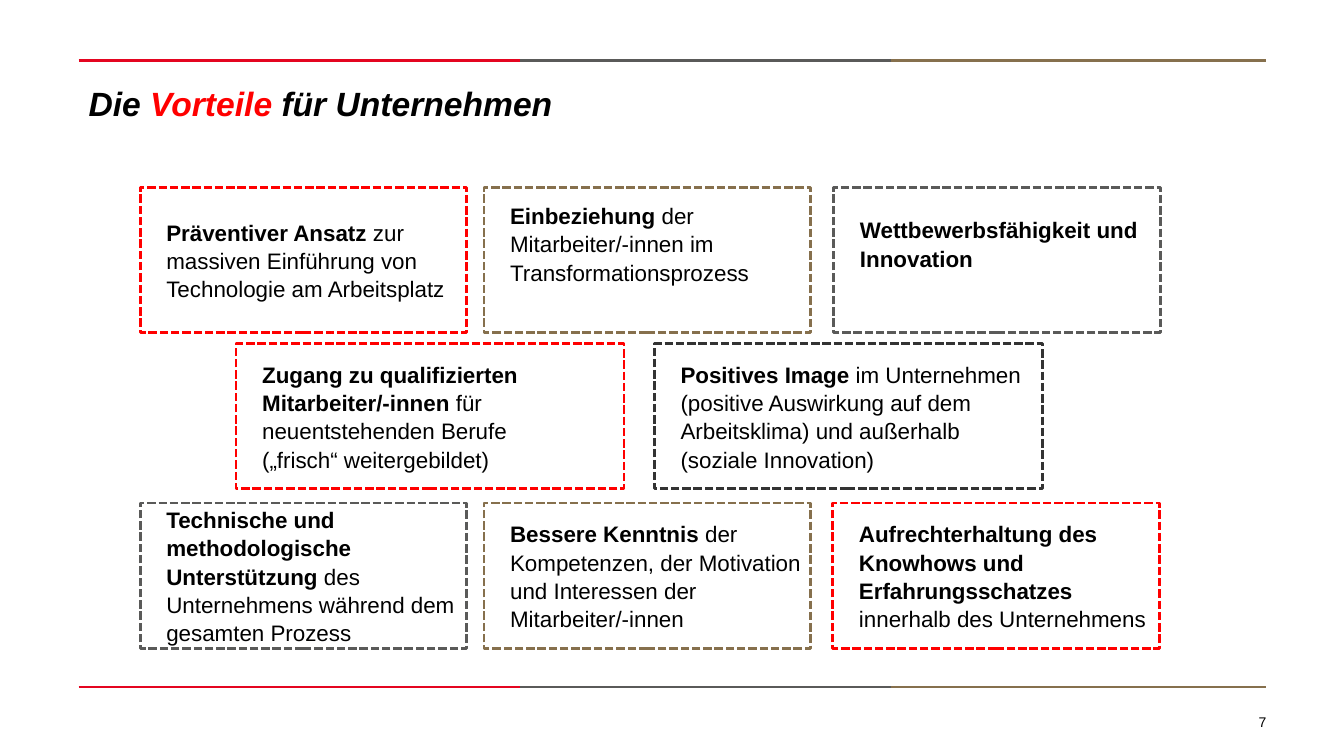
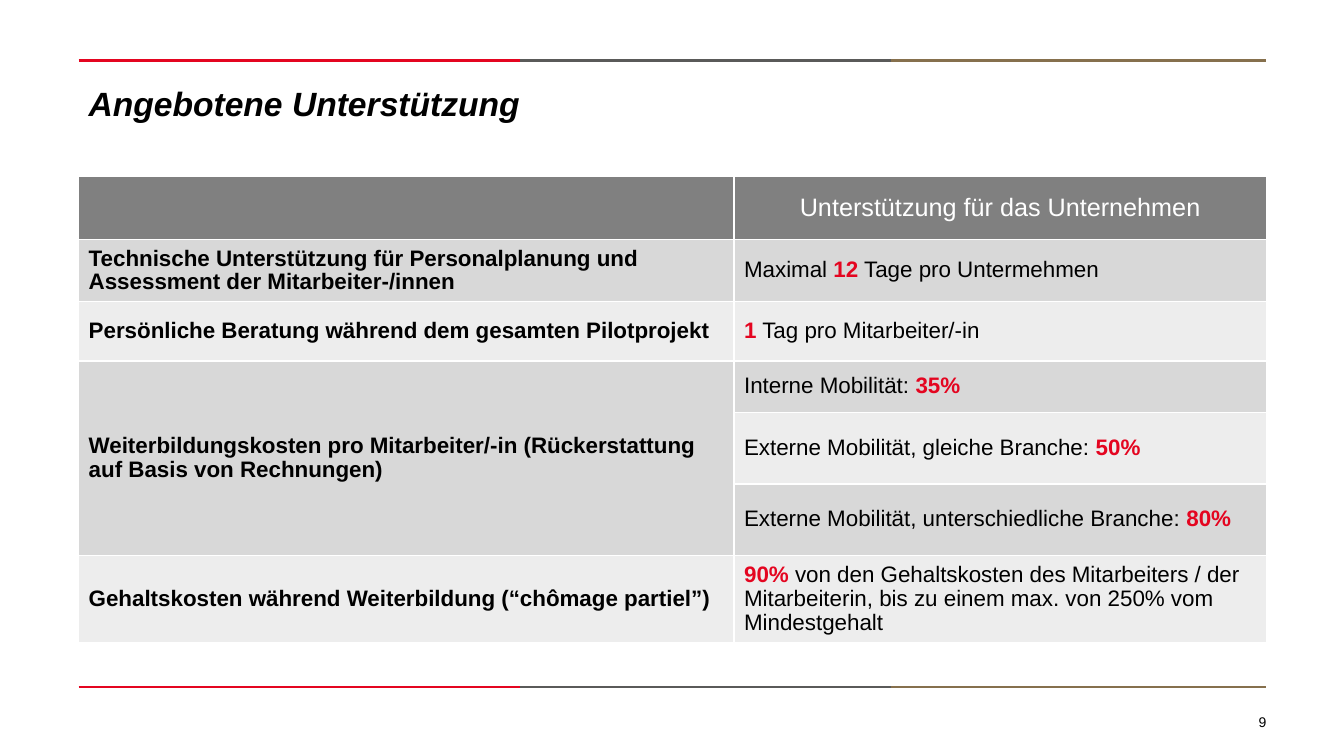
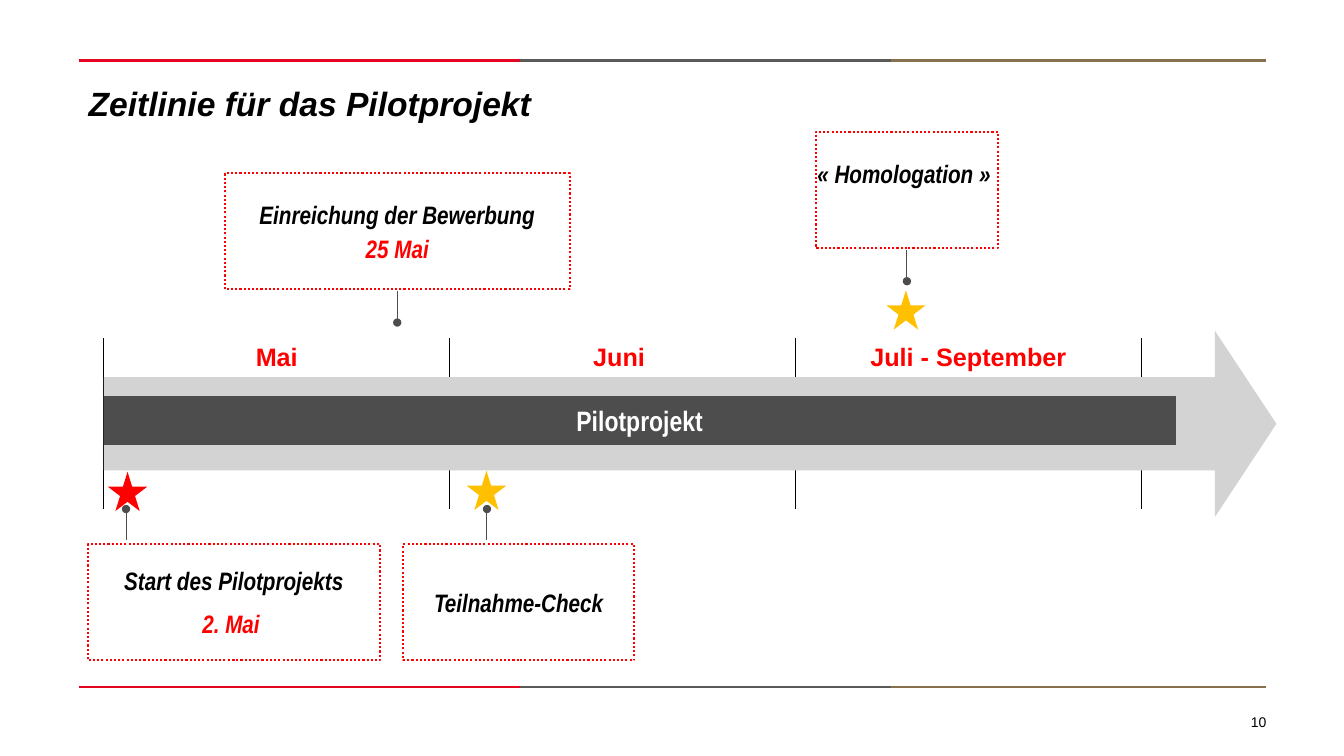
from lxml import etree
from pptx import Presentation
from pptx import util as u
from pptx.dml.color import RGBColor
from pptx.enum import dml, shapes, text
from pptx.oxml import ns

RED = RGBColor(0xE4, 0x05, 0x20)
BRIGHT_RED = RGBColor(0xFF, 0x00, 0x00)
GREY = RGBColor(0x5A, 0x5A, 0x59)
DARK_GREY = RGBColor(0x4D, 0x4D, 0x4D)
CHARCOAL = RGBColor(0x33, 0x33, 0x33)
HEADER_GREY = RGBColor(0x80, 0x80, 0x80)
ARROW_GREY = RGBColor(0xD3, 0xD3, 0xD3)
BAND_DARK = RGBColor(0xD8, 0xD8, 0xD8)
BAND_LIGHT = RGBColor(0xED, 0xED, 0xED)
BROWN = RGBColor(0x86, 0x70, 0x4D)
GOLD = RGBColor(0xFF, 0xC0, 0x00)
BLACK = RGBColor(0, 0, 0)
WHITE = RGBColor(0xFF, 0xFF, 0xFF)

SLIDE_WIDTH, SLIDE_HEIGHT = 13.33, 7.5
LEFT, RIGHT = 0.78, 12.56
CONTENT_WIDTH = RIGHT - LEFT
RULE_TOPS = (0.6, 6.82)
RULE_PARTS = ((LEFT, 5.3, RED), (5.16, 8.87, GREY), (8.84, RIGHT, BROWN))

# Benefit rows: top, box width, left edges
BENEFIT_ROWS = (
    (1.86, 3.24, (1.39, 4.8, 8.27)),
    (3.41, 3.85, (2.34, 6.49)),
    (4.99, 3.24, (1.39, 4.8, 8.26)),
)
BENEFIT_HEIGHT = 1.44
RAISED = 0.33  # one text line, added below to lift the text

AXIS_LEFT, MONTH_WIDTH = 1.03, 3.43
CALLOUT_HEIGHT = 1.15
STAR_SIZE = 0.39

CENTER = text.PP_ALIGN.CENTER


def inches(*lengths):
    return [u.Inches(length) for length in lengths]


def write(frame, paragraphs, *, size, color=BLACK, font="Arial", bold=False,
          italic=False, align=None, spacing=None, after=0):
    """Fill a frame; a paragraph is a list of strings or (string, format) runs."""
    for index, runs in enumerate(paragraphs):
        paragraph = frame.paragraphs[0] if index == 0 else frame.add_paragraph()
        paragraph.alignment = align or text.PP_ALIGN.LEFT
        if spacing:
            paragraph.line_spacing = spacing
        if index < len(paragraphs) - 1:
            paragraph.space_after = u.Pt(after)
        for item in runs:
            words, special = (item, {}) if isinstance(item, str) else item
            for number, line in enumerate(words.split("\n")):
                if number:
                    paragraph.add_line_break()
                run = paragraph.add_run()
                run.text = line
                run.font.size = u.Pt(size)
                run.font.name = font
                run.font.italic = italic
                run.font.bold = special.get("bold", bold)
                run.font.color.rgb = special.get("color", color)


def set_insets(frame, left=0, top=0, right=0, bottom=0):
    frame.margin_left, frame.margin_top = inches(left, top)
    frame.margin_right, frame.margin_bottom = inches(right, bottom)


def add_text(slide, box, paragraphs, insets=None, **text_format):
    frame = slide.shapes.add_textbox(*inches(*box)).text_frame
    frame.word_wrap = True
    if insets is not None:
        set_insets(frame, *insets)
    write(frame, paragraphs, **text_format)


def add_shape(slide, kind, box, fill=None, line=None, width=1.5, dash=None):
    shape = slide.shapes.add_shape(kind, *inches(*box))
    shape.shadow.inherit = False
    if fill is None:
        shape.fill.background()
    else:
        shape.fill.solid()
        shape.fill.fore_color.rgb = fill
    if line is None:
        shape.line.fill.background()
    else:
        shape.line.color.rgb = line
        shape.line.width = u.Pt(width)
        shape.line.dash_style = dash
    shape.text_frame.word_wrap = True
    shape.text_frame.vertical_anchor = text.MSO_ANCHOR.MIDDLE
    return shape


def add_line(slide, start, end, color, width, dot=False):
    """Draw a straight line, with a round dot at its start if asked."""
    line = slide.shapes.add_connector(
        shapes.MSO_CONNECTOR.STRAIGHT, *inches(*start, *end))
    line.line.color.rgb = color
    line.line.width = u.Pt(width)
    properties = line._element.spPr
    if dot:
        etree.SubElement(properties.get_or_add_ln(), ns.qn("a:headEnd"), type="oval")
    etree.SubElement(properties, ns.qn("a:effectLst"))


def set_borders(cell, sides, color):
    """Give the sides, listed in the order L R T B, a line of one point."""
    properties = cell._tc.get_or_add_tcPr()
    for position, side in enumerate(sides):
        border = etree.Element(ns.qn(f"a:ln{side}"), w=str(u.Pt(1)))
        fill = etree.SubElement(border, ns.qn("a:solidFill"))
        etree.SubElement(fill, ns.qn("a:srgbClr"), val=str(color))
        properties.insert(position, border)


def add_table(slide, left, top, widths, heights):
    table = slide.shapes.add_table(
        len(heights), len(widths),
        *inches(left, top, sum(widths), sum(heights))).table
    table.first_row = table.horz_banding = False
    for column, width in zip(table.columns, widths):
        column.width = u.Inches(width)
    for row, height in zip(table.rows, heights):
        row.height = u.Inches(height)
    return table


def new_slide(presentation, title, number):
    slide = presentation.slides.add_slide(presentation.slide_layouts[6])
    for top in RULE_TOPS:
        for start, end, color in RULE_PARTS:
            add_line(slide, (start, top), (end, top), color, 1.5)
    add_text(slide, (LEFT, 0.75, CONTENT_WIDTH, 1), [title],
             size=24, bold=True, italic=True, spacing=1.05)
    add_text(slide, (10.33, 7.08, RIGHT - 10.33, 0.17), [[str(number)]],
             insets=(), size=10, align=text.PP_ALIGN.RIGHT)
    return slide


def add_benefit(slide, box, color, lead, rest="", lift=0):
    shape = add_shape(slide, shapes.MSO_SHAPE.RECTANGLE, box, line=color,
                      width=2, dash=dml.MSO_LINE.SQUARE_DOT)
    set_insets(shape.text_frame, 0.26, 0.04, 0.07, 0.04 + lift)
    runs = [(lead, {"bold": True})] + ([rest] if rest else [])
    write(shape.text_frame, [runs], size=16, spacing=1.05)


def build_benefits(presentation):
    slide = new_slide(presentation, [
        "Die ", ("Vorteile", {"color": BRIGHT_RED}), " für Unternehmen"], 7)
    rows = (
        ((BRIGHT_RED, "Präventiver Ansatz ",
          "zur massiven Einführung von Technologie am Arbeitsplatz"),
         (BROWN, "Einbeziehung ",
          "der Mitarbeiter/-innen im Transformationsprozess", RAISED),
         (GREY, "Wettbewerbsfähigkeit und Innovation", "", RAISED)),
        ((BRIGHT_RED, "Zugang zu qualifizierten Mitarbeiter/-innen ",
          "für neuentstehenden Berufe \n(„frisch“ weitergebildet)"),
         (CHARCOAL, "Positives Image ",
          "im Unternehmen (positive Auswirkung auf dem Arbeitsklima) "
          "und außerhalb (soziale Innovation)")),
        ((GREY, "Technische und methodologische Unterstützung ",
          "des Unternehmens während dem gesamten Prozess"),
         (BROWN, "Bessere Kenntnis ",
          "der Kompetenzen, der Motivation und Interessen der Mitarbeiter/-innen"),
         (BRIGHT_RED, "Aufrechterhaltung des Knowhows und Erfahrungsschatzes ",
          "innerhalb des Unternehmens")),
    )
    for (top, width, lefts), benefits in zip(BENEFIT_ROWS, rows):
        for left, benefit in zip(lefts, benefits):
            add_benefit(slide, (left, top, width, BENEFIT_HEIGHT), *benefit)


def build_support(presentation):
    slide = new_slide(presentation, ["Angebotene Unterstützung"], 9)

    def key(figure):
        return figure, {"color": RED, "bold": True}

    rows = (
        ("", ["Unterstützung für das Unternehmen"]),
        ("Technische Unterstützung für Personalplanung und Assessment "
         "der Mitarbeiter-/innen",
         ["Maximal ", key("12"), " Tage pro Untermehmen"]),
        ("Persönliche Beratung während dem gesamten Pilotprojekt",
         [key("1"), " Tag pro Mitarbeiter/-in"]),
        ("Weiterbildungskosten pro Mitarbeiter/-in "
         "(Rückerstattung auf Basis von Rechnungen)",
         ["Interne Mobilität: ", key("35%")]),
        ("", ["Externe Mobilität, gleiche Branche: ", key("50%")]),
        ("", ["Externe Mobilität, unterschiedliche Branche: ", key("80%")]),
        ("Gehaltskosten während Weiterbildung (“chômage partiel”)",
         [key("90%"), " von den Gehaltskosten des Mitarbeiters / der Mitarbeiterin, "
          "bis zu einem max. von 250% vom Mindestgehalt"]),
    )
    table = add_table(slide, LEFT, 1.75, (6.5, 5.28),
                      (0.63, 0.59, 0.59, 0.51, 0.71, 0.71, 0.83))
    table.cell(3, 0).merge(table.cell(5, 0))
    for row, (topic, support) in enumerate(rows):
        header = row == 0
        band = BAND_DARK if row % 2 else BAND_LIGHT
        for column, runs in enumerate(([topic] if topic else [], support)):
            cell = table.cell(row, column)
            cell.vertical_anchor = text.MSO_ANCHOR.MIDDLE
            cell.fill.solid()
            cell.fill.fore_color.rgb = HEADER_GREY if header else band
            set_borders(cell, "LRTB", WHITE)
            if runs:
                write(cell.text_frame, [runs], size=18 if header else 16,
                      color=WHITE if header else BLACK, bold=column == 0,
                      align=CENTER if header else None,
                      spacing=None if header else 0.96)


def add_callout(slide, left, top, width, paragraphs, *, pin, after=3, lift=0):
    """Draw a dotted box and its pin, given as x, dot y and line end y."""
    shape = add_shape(slide, shapes.MSO_SHAPE.RECTANGLE,
                      (left, top, width, CALLOUT_HEIGHT), line=BRIGHT_RED,
                      dash=dml.MSO_LINE.ROUND_DOT)
    set_insets(shape.text_frame, bottom=lift)
    write(shape.text_frame, paragraphs, size=18, font="Arial Narrow", bold=True,
          italic=True, align=CENTER, after=after)
    x, dot, end = pin
    add_line(slide, (x, dot), (x, end), DARK_GREY, 0.75, dot=True)


def callout_above(slide, left, top, width, paragraphs, **options):
    bottom = top + CALLOUT_HEIGHT
    add_callout(slide, left, top, width, paragraphs,
                pin=(left + width / 2, bottom + 0.33, bottom + 0.02), **options)


def callout_below(slide, left, width, pin_x, paragraphs):
    top = 5.4
    add_callout(slide, left, top, width, paragraphs, after=9,
                pin=(pin_x, top - 0.35, top - 0.04))


def build_timeline(presentation):
    slide = new_slide(presentation, ["Zeitlinie für das Pilotprojekt"], 10)
    months = ("Mai", "Juni ", "Juli - September")
    table = add_table(slide, AXIS_LEFT, 3.36, [MONTH_WIDTH] * len(months), [1.68])
    for column, month in enumerate(months):
        cell = table.cell(0, column)
        cell.fill.background()
        set_borders(cell, "LR", BLACK)
        write(cell.text_frame, [[month]], size=18, color=BRIGHT_RED, bold=True,
              align=CENTER)

    arrow = add_shape(slide, shapes.MSO_SHAPE.RIGHT_ARROW,
                      (AXIS_LEFT, 3.28, 11.63, 1.85), fill=ARROW_GREY)
    arrow.adjustments[0], arrow.adjustments[1] = 0.5, 0.33
    bar = add_shape(slide, shapes.MSO_SHAPE.RECTANGLE,
                    (AXIS_LEFT, 3.93, 10.63, 0.48), fill=DARK_GREY,
                    line=DARK_GREY, width=0.25)
    write(bar.text_frame, [["Pilotprojekt"]], size=20, color=WHITE,
          font="Arial Narrow", bold=True, align=CENTER)

    for left, top, color in ((1.07, 4.68, BRIGHT_RED), (4.63, 4.67, GOLD),
                             (8.79, 2.88, GOLD)):
        add_shape(slide, shapes.MSO_SHAPE.STAR_5_POINT,
                  (left, top, STAR_SIZE, STAR_SIZE), fill=color)

    date = {"color": BRIGHT_RED}
    callout_above(slide, 2.23, 1.72, 3.42,
                  [["Einreichung der Bewerbung"], [("25 Mai", date)]])
    callout_above(slide, 8.09, 1.31, 1.81, [["« Homologation » "]], lift=RAISED)
    callout_below(slide, 0.87, 2.9, 1.25,
                  [["Start des Pilotprojekts"], [("2. Mai ", date)]])
    callout_below(slide, 4, 2.29, 4.83, [["Teilnahme-Check"]])


def main():
    presentation = Presentation()
    presentation.slide_width, presentation.slide_height = inches(
        SLIDE_WIDTH, SLIDE_HEIGHT)
    build_benefits(presentation)
    build_support(presentation)
    build_timeline(presentation)
    presentation.save("out.pptx")


if __name__ == "__main__":
    main()
